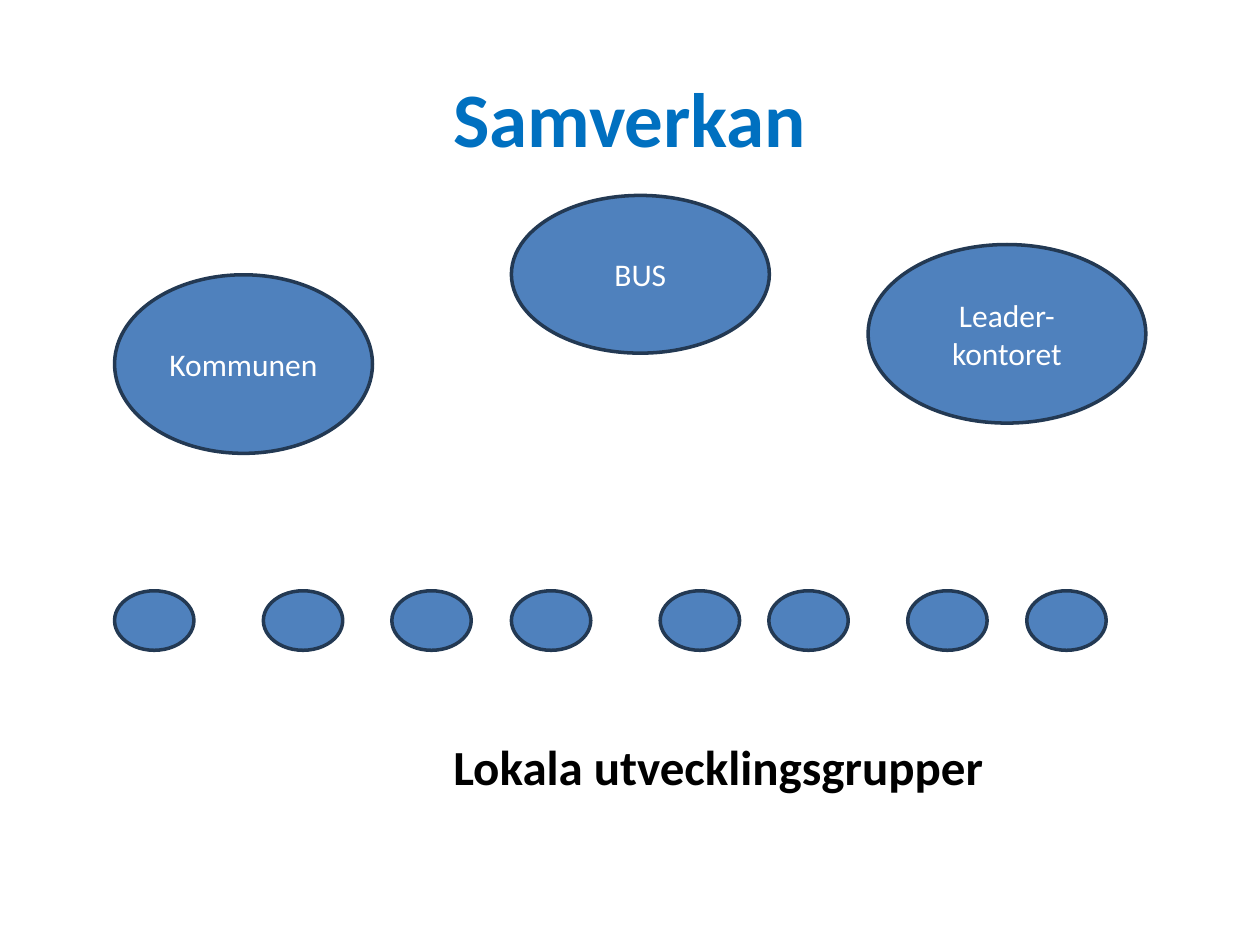
from pptx import Presentation
from pptx import util as u
from pptx.dml.color import RGBColor
from pptx.enum import shapes, text

TITLE_BLUE = RGBColor(0x00, 0x70, 0xC0)
FILL_BLUE = RGBColor(0x4F, 0x81, 0xBD)
OUTLINE = RGBColor(0x23, 0x39, 0x53)
WHITE = RGBColor(0xFF, 0xFF, 0xFF)
BLACK = RGBColor(0x00, 0x00, 0x00)
FONT = "Calibri"

# Lengths in cm: left, top, width, height
TITLE = ("Samverkan", (1.27, 0.76, 22.86, 3.18))
CAPTION = ("Lokala utvecklingsgrupper", (8.89, 14.73, 13.74, 1.45))
PARTNERS = [
    (["BUS"], (10.31, 3.94, 5.2, 3.18)),
    (["Kommunen"], (2.31, 5.54, 5.2, 3.6)),
    (["Leader-", "kontoret"], (17.5, 4.93, 5.6, 3.6)),
]
GROUP_LEFTS = [2.31, 5.31, 7.9, 10.31, 13.31, 15.5, 18.3, 20.7]
GROUP_TOP, GROUP_WIDTH, GROUP_HEIGHT = 11.91, 1.6, 1.2


def write(tf, lines, size, color, bold=False, align=text.PP_ALIGN.CENTER,
          anchor=text.MSO_ANCHOR.MIDDLE):
    tf.word_wrap = True
    tf.vertical_anchor = anchor
    for i, line in enumerate(lines):
        p = tf.paragraphs[0] if i == 0 else tf.add_paragraph()
        p.alignment = align
        r = p.add_run()
        r.text = line
        r.font.name = FONT
        r.font.size = u.Pt(size)
        r.font.bold = bold
        r.font.color.rgb = color


def add_ellipse(s, box):
    sp = s.shapes.add_shape(shapes.MSO_SHAPE.OVAL, *map(u.Cm, box))
    sp.shadow.inherit = False
    sp.fill.solid()
    sp.fill.fore_color.rgb = FILL_BLUE
    sp.line.color.rgb = OUTLINE
    sp.line.width = u.Pt(2)
    return sp


def main():
    prs = Presentation()
    prs.slide_width, prs.slide_height = u.Cm(25.4), u.Cm(19.05)
    s = prs.slides.add_slide(prs.slide_layouts[5])

    title, box = TITLE
    sp = s.shapes.title
    sp.left, sp.top, sp.width, sp.height = map(u.Cm, box)
    write(sp.text_frame, [title], size=44, color=TITLE_BLUE, bold=True)

    for lines, box in PARTNERS:
        write(add_ellipse(s, box).text_frame, lines, size=18, color=WHITE)

    for left in GROUP_LEFTS:
        add_ellipse(s, (left, GROUP_TOP, GROUP_WIDTH, GROUP_HEIGHT))

    caption, box = CAPTION
    tf = s.shapes.add_textbox(*map(u.Cm, box)).text_frame
    write(tf, [caption], size=28, color=BLACK, bold=True,
          align=text.PP_ALIGN.LEFT, anchor=text.MSO_ANCHOR.TOP)
    tf.auto_size = text.MSO_AUTO_SIZE.SHAPE_TO_FIT_TEXT

    prs.save("out.pptx")


if __name__ == "__main__":
    main()
